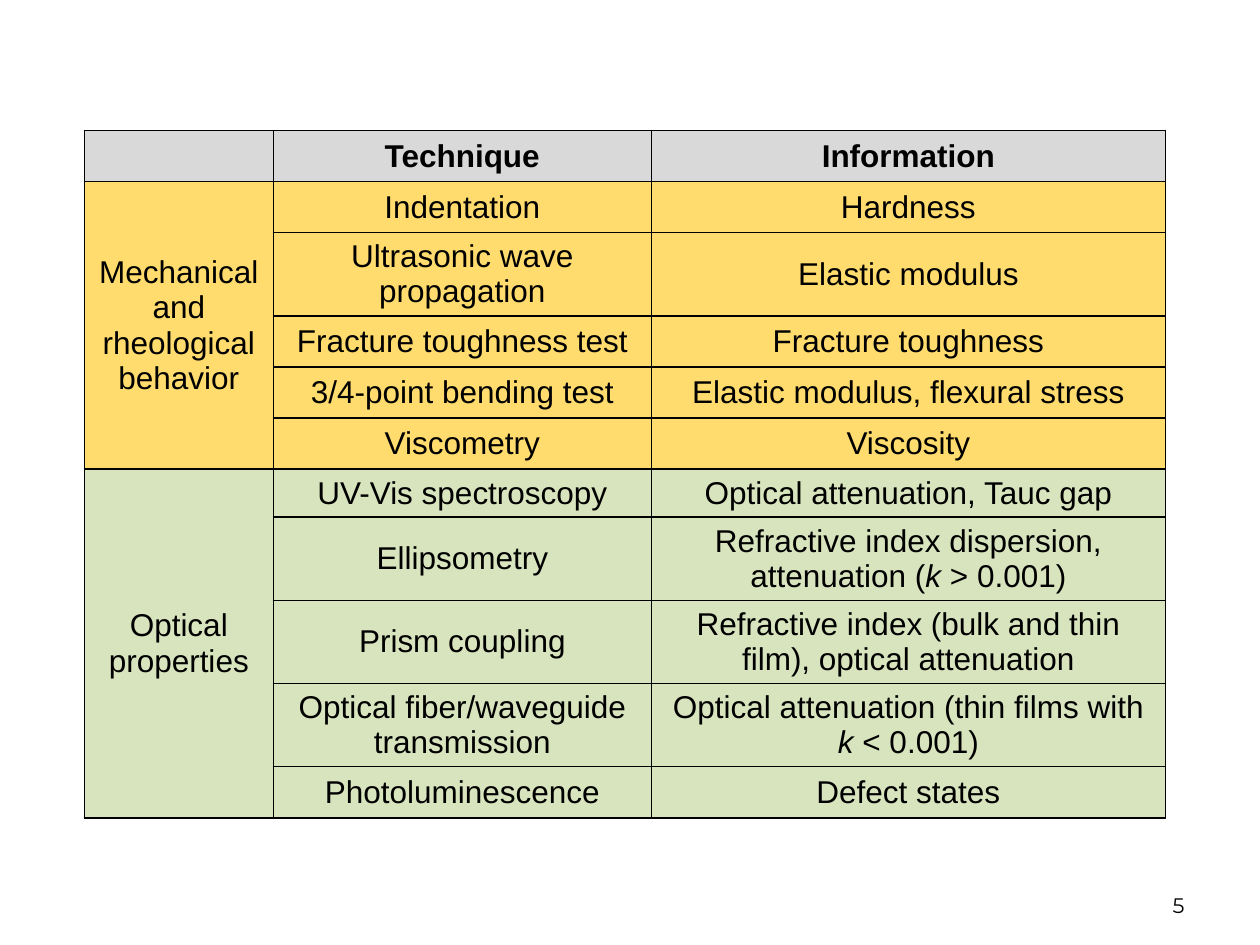
from lxml import etree
from pptx import Presentation
from pptx.dml import color
from pptx.enum import text
from pptx.oxml import ns
from pptx.util import Pt


def paint(target, value):
    if hasattr(target, "solid"):
        target.solid()
        target = target.fore_color
    else:
        target = target.color
    target.rgb = color.RGBColor.from_string(value)


def add_borders(cell):
    properties = cell._tc.get_or_add_tcPr()
    for index, side in enumerate(("lnL", "lnR", "lnT", "lnB")):
        line = etree.Element(ns.qn(f"a:{side}"), w=str(Pt(1)))
        fill = etree.SubElement(line, ns.qn("a:solidFill"))
        etree.SubElement(fill, ns.qn("a:srgbClr"), val="000000")
        properties.insert(index, line)


groups = [
    ("D9D9D9", "", [("Technique", "Information")]),
    ("FFDC6D", "Mechanical and rheological behavior", [
        ("Indentation", "Hardness"),
        ("Ultrasonic wave propagation", "Elastic modulus"),
        ("Fracture toughness test", "Fracture toughness"),
        ("3/4-point bending test", "Elastic modulus, flexural stress"),
        ("Viscometry", "Viscosity"),
    ]),
    ("D7E4BD", "Optical properties", [
        ("UV-Vis spectroscopy", "Optical attenuation, Tauc gap"),
        ("Ellipsometry", "Refractive index dispersion, attenuation (*k* > 0.001)"),
        ("Prism coupling", "Refractive index (bulk and thin film), optical attenuation"),
        ("Optical fiber/waveguide transmission",
         "Optical attenuation (thin films with *k* < 0.001)"),
        ("Photoluminescence", "Defect states"),
    ]),
]

deck = Presentation()
deck.slide_width, deck.slide_height = Pt(720), Pt(540)
page = deck.slides.add_slide(deck.slide_layouts[6])

row_count = sum(len(rows) for _, _, rows in groups)
frame = page.shapes.add_table(row_count, 3, Pt(48.2), Pt(74.6), Pt(617.8), Pt(405.4))
table = frame.table
table.first_row = False
table.horz_banding = False
for column, width in zip(table.columns, (108, 216, 293.8)):
    column.width = Pt(width)
for row in table.rows:
    row.height = Pt(29.2)
table.rows[6].height = Pt(10)

top = 0
for fill, label, rows in groups:
    for offset, (technique, information) in enumerate(rows):
        category = label if offset == 0 else ""
        for column, words in enumerate((category, technique, information)):
            cell = table.cell(top + offset, column)
            cell.vertical_anchor = text.MSO_ANCHOR.MIDDLE
            paint(cell.fill, fill)
            add_borders(cell)
            para = cell.text_frame.paragraphs[0]
            para.alignment = text.PP_ALIGN.CENTER
            para.font.name, para.font.size = "Arial", Pt(18)
            para.font.bold = top == 0
            paint(para.font, "000000")
            for index, part in enumerate(words.split("*") if words else []):
                span = para.add_run()
                span.text = part
                if index % 2:
                    span.font.italic = True
    if len(rows) > 1:
        table.cell(top, 0).merge(table.cell(top + len(rows) - 1, 0))
    top += len(rows)

box = page.shapes.add_textbox(Pt(516), Pt(492), Pt(168), Pt(36))
box.text_frame.word_wrap = True
box.text_frame.vertical_anchor = text.MSO_ANCHOR.BOTTOM
para = box.text_frame.paragraphs[0]
para.text = "5"
para.alignment = text.PP_ALIGN.RIGHT
para.font.name, para.font.size = "Montserrat", Pt(12)
paint(para.font, "000000")

deck.save("out.pptx")
